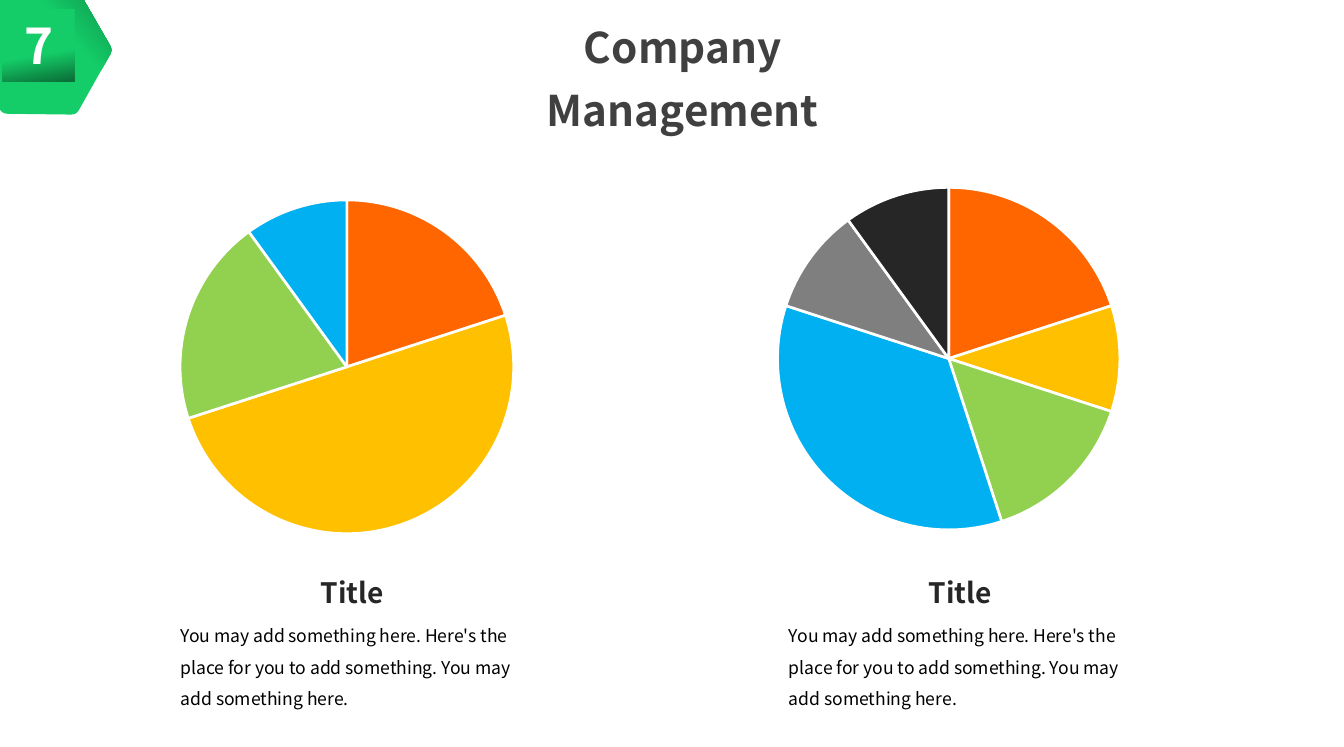
from math import cos, pi, sin

from lxml.etree import SubElement
from pptx import Presentation
from pptx.chart.data import CategoryChartData
from pptx.dml.color import RGBColor
from pptx.enum.chart import XL_CHART_TYPE as ChartType
from pptx.enum.shapes import MSO_SHAPE as Shape
from pptx.enum.text import MSO_ANCHOR as Anchor, PP_ALIGN as Align
from pptx.oxml.ns import qn
from pptx.util import Cm, Pt

WHITE = RGBColor(0xFF, 0xFF, 0xFF)
BLACK = RGBColor(0, 0, 0)
DARK = RGBColor(0x26, 0x26, 0x26)
SLATE = RGBColor(0x40, 0x40, 0x40)
GRAY = RGBColor(0x7F, 0x7F, 0x7F)
GREEN = RGBColor(0x14, 0xCD, 0x68)
DEEP_GREEN = RGBColor(0x0B, 0x6E, 0x38)
SLICE_COLORS = [RGBColor(0xFF, 0x66, 0), RGBColor(0xFF, 0xC0, 0),
                RGBColor(0x92, 0xD0, 0x50), RGBColor(0, 0xB0, 0xF0), GRAY, DARK]
FONT = "Noto Sans CJK SC"
BODY = ("You may add something here. Here's the place for you to add something. "
        "You may add something here.")

# Chart box, inner plot area (fractions of the box), values, caption box
PIES = [
    ((2.36, 3.96, 8.56, 7.49), (0.147, 0.007, 0.783, 0.896),
     [20, 50, 20, 10], (3.38, 11.43, 7.39, 3.02)),
    ((14.38, 2.26, 11.91, 9.17), (0.055, 0.164, 0.676, 0.75),
     [20, 10, 15, 35, 10, 10], (15.6, 11.43, 7.39, 3.02)),
]


def write(p, text, size, color, bold=True, **formats):
    for name, value in formats.items():
        setattr(p, name, value)
    r = p.add_run()
    r.text = text
    r.font.color.rgb = color
    for name, value in {"name": FONT, "size": Pt(size), "bold": bold}.items():
        setattr(r.font, name, value)


def add_text_box(s, box):
    tf = s.shapes.add_textbox(*map(Cm, box)).text_frame
    tf.word_wrap = True
    return tf


def paint_green(sp):
    sp.shadow.inherit = False
    sp.line.fill.background()
    sp.fill.gradient()
    sp.fill.gradient_angle = 280
    for stop, position, color in zip(sp.fill.gradient_stops, (0.62, 1), (GREEN, DEEP_GREEN)):
        stop.position = position
        stop.color.rgb = color


def rounded_hexagon(cx, cy, rx, ry, cut=0.07, steps=4):
    """Return hexagon points in EMU, each corner eased by a quadratic curve."""
    corners = [(cx + rx * cos(k * pi / 3), cy + ry * sin(k * pi / 3) / sin(pi / 3))
               for k in range(6)]
    points = []
    for k, corner in enumerate(corners):
        before, after = corners[k - 1], corners[(k + 1) % 6]
        for t in (i / steps for i in range(steps + 1)):
            points.append(tuple(
                int(Cm(c + cut * ((1 - t) ** 2 * (b - c) + t ** 2 * (a - c))))
                for b, c, a in zip(before, corner, after)))
    return points


def add_badge(s, box, number):
    left, top, width, height = box
    points = rounded_hexagon(left + width / 2, top + height / 2 + 0.08, 1.52, 1.28)
    builder = s.shapes.build_freeform(*points[0])
    builder.add_line_segments(points[1:], close=True)
    hexagon = builder.convert_to_shape()
    hexagon.rotation = 240
    paint_green(hexagon)

    square = s.shapes.add_shape(Shape.RECTANGLE, *map(Cm, box))
    paint_green(square)
    tf = square.text_frame
    tf.vertical_anchor = Anchor.MIDDLE
    write(tf.paragraphs[0], number, 28, WHITE, alignment=Align.CENTER)


def add_title(s, box, text):
    tf = add_text_box(s, box)
    for side in ("left", "top", "right", "bottom"):
        setattr(tf, f"margin_{side}", 0)
    write(tf.paragraphs[0], text, 24, SLATE, alignment=Align.CENTER, line_spacing=1.25)


def set_plot_area(chart, area):
    plot_area = chart.plots[0]._element.getparent()
    layout = plot_area.find(qn("c:layout"))
    if layout is None:
        layout = SubElement(plot_area, qn("c:layout"))
        plot_area.insert(0, layout)
    manual = SubElement(layout, qn("c:manualLayout"))
    settings = [("layoutTarget", "inner"), ("xMode", "edge"), ("yMode", "edge"),
                *zip("xywh", area)]
    for name, value in settings:
        SubElement(manual, qn(f"c:{name}")).set("val", str(value))


def add_pie(s, box, area, values):
    data = CategoryChartData()
    data.categories = [str(i + 1) for i in range(len(values))]
    data.add_series("Series 1", values)
    chart = s.shapes.add_chart(ChartType.PIE, *map(Cm, box), data).chart
    chart.has_title = chart.has_legend = False
    chart.font.name, chart.font.size = "Arial", Pt(10)
    chart.font.color.rgb = BLACK
    chart.plots[0].vary_by_categories = True
    set_plot_area(chart, area)
    for i, color in enumerate(SLICE_COLORS[:len(values)]):
        fmt = chart.plots[0].series[0].points[i].format
        fmt.fill.solid()
        fmt.fill.fore_color.rgb = color
        fmt.line.color.rgb = WHITE
        fmt.line.width = Pt(1.5)


def add_caption(s, box):
    tf = add_text_box(s, box)
    write(tf.paragraphs[0], "Title", 16, DARK, alignment=Align.CENTER)
    write(tf.add_paragraph(), BODY, 10, BLACK, bold=False,
          line_spacing=1.5, space_before=Pt(3))


def main():
    prs = Presentation()
    prs.slide_width, prs.slide_height = Cm(27), Cm(15)
    s = prs.slides.add_slide(prs.slide_layouts[6])
    for box, area, values, caption in PIES:
        add_pie(s, box, area, values)
        add_caption(s, caption)
    add_badge(s, (0.05, 0.18, 1.45, 1.45), "7")
    add_title(s, (10.77, 0.18, 5.89, 2.57), "Company Management")
    prs.save("out.pptx")


if __name__ == "__main__":
    main()
